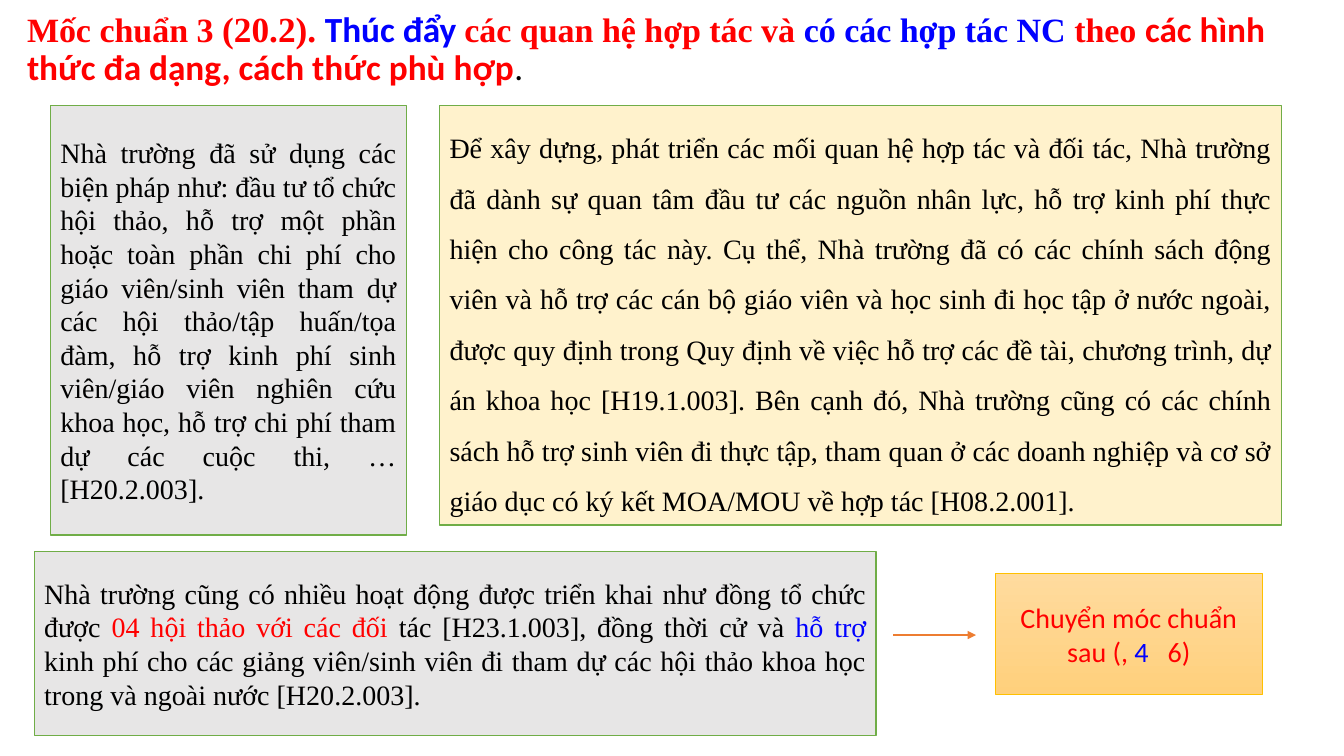
from pptx import Presentation
from pptx.dml.color import RGBColor
from pptx.enum.shapes import MSO_CONNECTOR, MSO_SHAPE
from pptx.enum.text import MSO_ANCHOR, PP_ALIGN
from pptx.oxml.ns import qn
from pptx.util import Inches, Pt
from lxml.etree import SubElement

COLORS = {
    "black": "000000", "red": "FF0000", "blue": "0000FF", "gray": "E7E6E6",
    "cream": "FFF2CC", "green": "70AD47", "gold": "FFC000",
    "amber_top": "FFDB9E", "amber_bottom": "FFD07C", "orange": "ED7D31",
}
SERIF, SANS = "Times New Roman", "Calibri"

TITLE_PLACE = (0.17, 0, 13, 1.0)
TITLE = [
    ("Mốc chuẩn 3 ", "red", SERIF, 24.3),
    ("(20.2).", "red", SERIF, 25.2),
    (" ", "red", SERIF, 24.3),
    ("Thúc đẩy ", "blue", SANS, 25.2),
    ("các quan hệ hợp tác và ", "red", SERIF, 24.3),
    ("có các hợp tác NC ", "blue", SERIF, 24.3),
    ("theo ", "red", SERIF, 24.3),
    ("các hình thức đa dạng, cách thức phù hợp", "red", SANS, 25.2),
    (".", "black", SANS, 25.2),
]
PANELS = [
    ((0.5, 1.05, 3.53, 4.26), "gray", 1.0, [
        ("Nhà trường đã sử dụng các biện pháp như: đầu tư tổ chức hội thảo, hỗ trợ một phần "
         "hoặc toàn phần chi phí cho giáo viên/sinh viên tham dự các hội thảo/tập huấn/tọa đàm, "
         "hỗ trợ kinh phí sinh viên/giáo viên nghiên cứu khoa học, hỗ trợ chi phí tham dự các "
         "cuộc thi, … [H20.2.003].", "black")]),
    ((4.36, 1.05, 8.35, 4.16), "cream", 1.5, [
        ("Để xây dựng, phát triển các mối quan hệ hợp tác và đối tác, Nhà trường đã dành sự quan "
         "tâm đầu tư các nguồn nhân lực, hỗ trợ kinh phí thực hiện cho công tác này. Cụ thể, Nhà "
         "trường đã có các chính sách động viên và hỗ trợ các cán bộ giáo viên và học sinh đi học "
         "tập ở nước ngoài, được quy định trong Quy định về việc hỗ trợ các đề tài, chương trình, "
         "dự án khoa học [H19.1.003]. Bên cạnh đó, Nhà trường cũng có các chính sách hỗ trợ sinh "
         "viên đi thực tập, tham quan ở các doanh nghiệp và cơ sở giáo dục có ký kết MOA/MOU về "
         "hợp tác [H08.2.001].", "black")]),
    ((0.34, 5.47, 8.35, 1.83), "gray", 1.0, [
        ("Nhà trường cũng có nhiều hoạt động được triển khai như đồng tổ chức được ", "black"),
        ("04 hội thảo với các đối ", "red"),
        ("tác [H23.1.003], đồng thời cử và ", "black"),
        ("hỗ trợ ", "blue"),
        ("kinh phí cho các giảng viên/sinh viên đi tham dự các hội thảo khoa học trong và ngoài "
         "nước [H20.2.003].", "black")]),
]
NEXT_PLACE = (9.87, 5.69, 2.65, 1.2)
NEXT_STEP = [("Chuyển móc chuẩn sau (, ", "red"), ("4", "blue"), (" ", "red"), ("6)", "red")]
WIDE_GAP = 2
ARROW = (8.86, 6.3, 9.68, 6.3)


def color(name):
    return RGBColor.from_string(COLORS[name])


def inches(values):
    return [Inches(value) for value in values]


def add_span(para, text, ink):
    span = para.add_run()
    span.text = text
    span.font.color.rgb = color(ink)
    return span


def add_title(page):
    frame = page.shapes.add_textbox(*inches(TITLE_PLACE)).text_frame
    frame.word_wrap = True
    frame.vertical_anchor = MSO_ANCHOR.MIDDLE
    para = frame.paragraphs[0]
    para.line_spacing = 0.9
    for text, ink, font, size in TITLE:
        span = add_span(para, text, ink)
        span.font.name, span.font.size = font, Pt(size)
        span.font.bold = ink != "black"


def add_panel(page, place, edge, weight, spans, font, align, spacing=1.0):
    box = page.shapes.add_shape(MSO_SHAPE.RECTANGLE, *inches(place))
    box.shadow.inherit = False
    box.line.color.rgb = color(edge)
    box.line.width = Pt(weight)
    box.text_frame.word_wrap = True
    box.text_frame.vertical_anchor = MSO_ANCHOR.MIDDLE
    para = box.text_frame.paragraphs[0]
    para.alignment, para.line_spacing = align, spacing
    para.font.name, para.font.size = font, Pt(20)
    for text, ink in spans:
        add_span(para, text, ink)
    return box


def add_next_step(page):
    box = add_panel(page, NEXT_PLACE, "gold", 0.5, NEXT_STEP, SANS, PP_ALIGN.CENTER)
    box.fill.gradient()
    box.fill.gradient_angle = 270
    for stop, name in zip(box.fill.gradient_stops, ("amber_top", "amber_bottom")):
        stop.color.rgb = color(name)
    gap = box.text_frame.paragraphs[0].runs[WIDE_GAP]
    gap.font._element.set("spc", "900")


def add_arrow(page):
    arrow = page.shapes.add_connector(MSO_CONNECTOR.STRAIGHT, *inches(ARROW))
    arrow.line.color.rgb = color("orange")
    arrow.line.width = Pt(1.5)
    SubElement(arrow.line._get_or_add_ln(), qn("a:tailEnd"), type="triangle")
    SubElement(arrow._element.spPr, qn("a:effectLst"))


def main():
    """Build the slide on cooperation benchmark 20.2."""
    deck = Presentation()
    deck.slide_width, deck.slide_height = Inches(13.33), Inches(7.5)
    page = deck.slides.add_slide(deck.slide_layouts[6])
    add_title(page)
    for place, fill, spacing, spans in PANELS:
        box = add_panel(page, place, "green", 1, spans, SERIF, PP_ALIGN.JUSTIFY, spacing)
        box.fill.solid()
        box.fill.fore_color.rgb = color(fill)
    add_next_step(page)
    add_arrow(page)
    deck.save("out.pptx")


if __name__ == "__main__":
    main()
